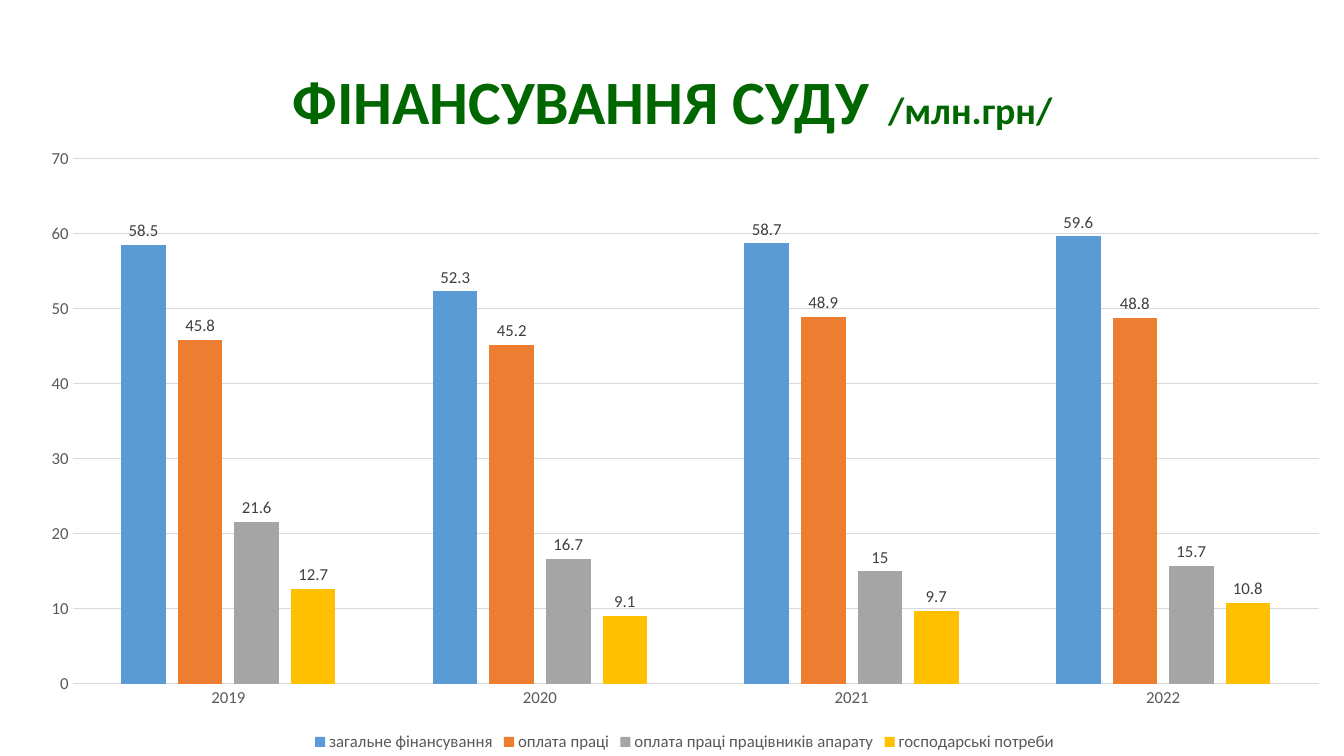
from lxml.etree import SubElement
from pptx import Presentation
from pptx.chart.data import CategoryChartData as ChartData
from pptx.dml.color import RGBColor
from pptx.enum.chart import XL_CHART_TYPE as Kind, XL_LABEL_POSITION as Spot
from pptx.enum.chart import XL_LEGEND_POSITION as Side, XL_TICK_MARK as Tick
from pptx.enum.text import MSO_ANCHOR as Anchor, PP_ALIGN as Align
from pptx.oxml.ns import qn
from pptx.util import Inches, Pt

FACE = "Calibri"
GREEN = RGBColor(0x00, 0x66, 0x00)
GREY = RGBColor(0x59, 0x59, 0x59)
DARK = RGBColor(0x40, 0x40, 0x40)
PALE = RGBColor(0xD9, 0xD9, 0xD9)
BLUE = RGBColor(0x5B, 0x9B, 0xD5)
ORANGE = RGBColor(0xED, 0x7D, 0x31)
SILVER = RGBColor(0xA5, 0xA5, 0xA5)
GOLD = RGBColor(0xFF, 0xC0, 0x00)

YEARS = ["2019", "2020", "2021", "2022"]
COSTS = [
    ("загальне фінансування", BLUE, (58.5, 52.3, 58.7, 59.6)),
    ("оплата праці", ORANGE, (45.8, 45.2, 48.9, 48.8)),
    ("оплата праці працівників апарату", SILVER, (21.6, 16.7, 15, 15.7)),
    ("господарські потреби", GOLD, (12.7, 9.1, 9.7, 10.8)),
]


def style(font, size, color):
    """Set the face, size and colour of a font."""
    font.name, font.size = FACE, Pt(size)
    font.color.rgb = color


def rule(line):
    """Make a line thin and pale."""
    line.color.rgb = PALE
    line.width = Pt(0.75)


def add_title(slide, x, y, w, h):
    """Fill the title placeholder and put it in its box."""
    title = slide.shapes.title
    title.left, title.top, title.width, title.height = map(Inches, (x, y, w, h))
    frame = title.text_frame
    frame.word_wrap = True
    frame.vertical_anchor = Anchor.MIDDLE
    para = frame.paragraphs[0]
    para.alignment, para.line_spacing = Align.CENTER, 0.9
    for text, size in (("ФІНАНСУВАННЯ СУДУ ", 44), (" ", 14), ("/млн.грн/", 27)):
        run = para.add_run()
        run.text = text
        style(run.font, size, GREEN)
        run.font.bold = True


def set_plot(chart, **box):
    """Fix the inner plot area as fractions of the chart."""
    area = chart._chartSpace.chart.plotArea
    for old in area.findall(qn("c:layout")):
        area.remove(old)
    layout = SubElement(area, qn("c:layout"))
    area.insert(0, layout)
    manual = SubElement(layout, qn("c:manualLayout"))
    marks = {"layoutTarget": "inner", "xMode": "edge", "yMode": "edge", **box}
    for name, value in marks.items():
        SubElement(manual, qn(f"c:{name}")).set("val", str(value))


def add_costs(slide, x, y, w, h):
    """Draw the clustered columns of costs by year."""
    data = ChartData()
    data.categories = YEARS
    for name, _, values in COSTS:
        data.add_series(name, values)
    chart = slide.shapes.add_chart(
        Kind.COLUMN_CLUSTERED, *map(Inches, (x, y, w, h)), data).chart
    style(chart.font, 12, GREY)
    chart.has_title = False
    chart.has_legend = True
    chart.legend.position = Side.BOTTOM
    chart.legend.include_in_layout = False
    style(chart.legend.font, 12, GREY)

    plot = chart.plots[0]
    plot.gap_width, plot.overlap = 219, -27
    plot.vary_by_categories = False
    for series, (_, color, _) in zip(plot.series, COSTS):
        series.format.fill.solid()
        series.format.fill.fore_color.rgb = color
        labels = series.data_labels
        labels.show_value = True
        labels.position = Spot.OUTSIDE_END
        style(labels.font, 12, DARK)

    for axis in (chart.category_axis, chart.value_axis):
        axis.major_tick_mark = axis.minor_tick_mark = Tick.NONE
        style(axis.tick_labels.font, 12, GREY)
    rule(chart.category_axis.format.line)
    scale = chart.value_axis
    scale.minimum_scale, scale.maximum_scale, scale.major_unit = 0, 70, 10
    scale.format.line.fill.background()
    rule(scale.major_gridlines.format.line)
    set_plot(chart, x=0.036, y=0.036, w=0.945, h=0.848)


def main():
    """Build and save the slide."""
    deck = Presentation()
    deck.slide_width, deck.slide_height = Inches(13.33), Inches(7.5)
    slide = deck.slides.add_slide(deck.slide_layouts[5])
    add_title(slide, 0.92, 0.4, 11.5, 1.28)
    add_costs(slide, 0.25, 1.35, 13.08, 6.15)
    deck.save("out.pptx")


if __name__ == "__main__":
    main()
